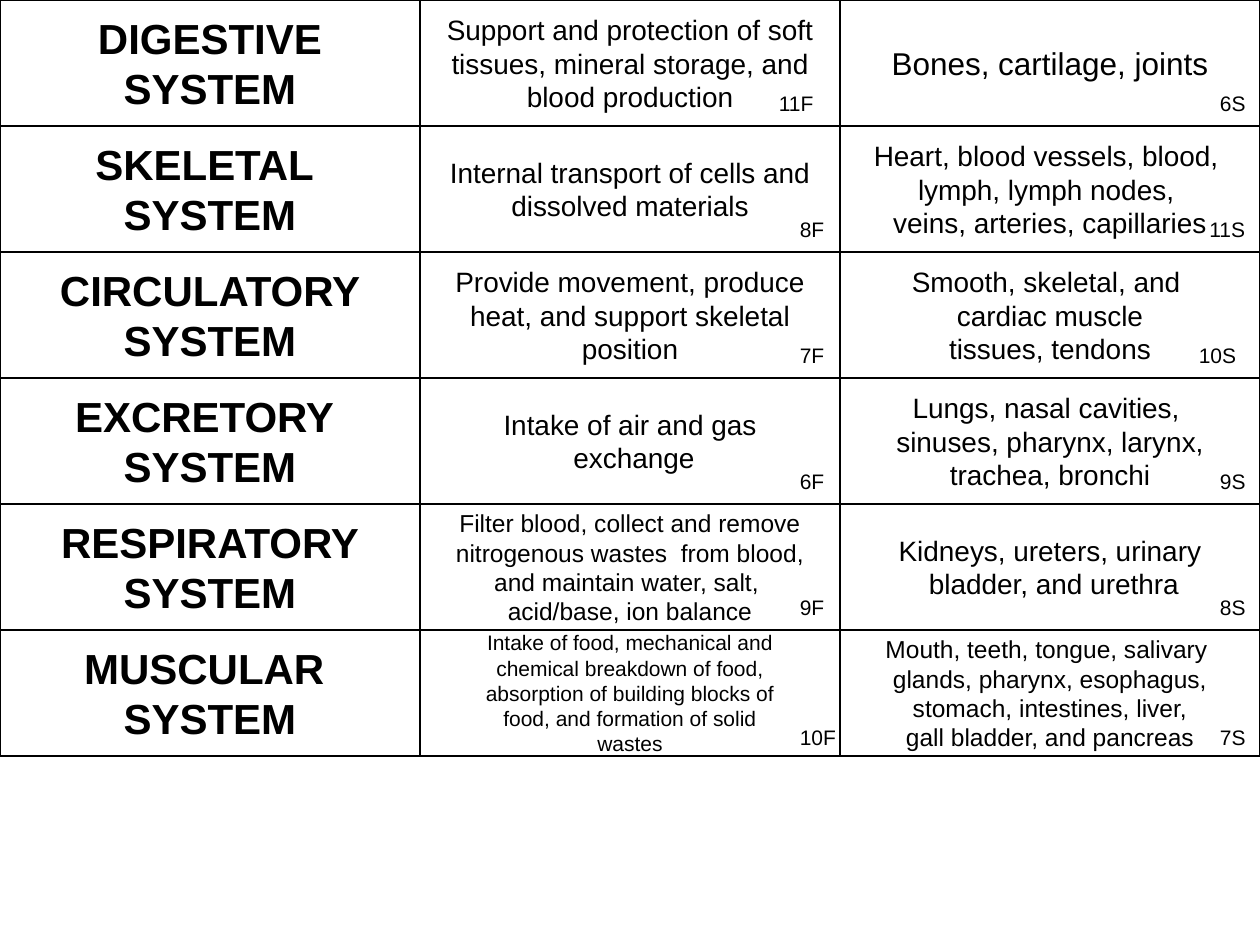
from lxml import etree
from pptx import Presentation
from pptx import util as u
from pptx.dml import color
from pptx.enum import shapes, text
from pptx.oxml import ns

INK = "000000"

deck = Presentation()
deck.slide_width, deck.slide_height = u.Inches(10), u.Inches(7.5)
page = deck.slides.add_slide(deck.slide_layouts[6])

# Grid: three equal columns, rows of 2/15 of the slide height
COLUMN = deck.slide_width / 3
ROW = deck.slide_height * 2 / 15
STEP = COLUMN / 40  # fine step for placing the card codes


def rgb(value):
    return color.RGBColor.from_string(value)


def write(frame, lines, size, bold=False, align=text.PP_ALIGN.LEFT):
    for number, line in enumerate(lines):
        para = frame.paragraphs[0] if number == 0 else frame.add_paragraph()
        para.alignment = align
        span = para.add_run()
        span.text = line
        span.font.name = "Arial"
        span.font.size = u.Pt(size)
        span.font.bold = bold
        span.font.color.rgb = rgb(INK)


# Each row: system name, then (size, lines) for its function and its structures
rows = [
    ("DIGESTIVE",
     (16, ["Support and protection of soft", "tissues, mineral storage, and",
           "blood production"]),
     (18, ["Bones, cartilage, joints"])),
    ("SKELETAL ",
     (16, ["Internal transport of cells and", "dissolved materials"]),
     (16, ["Heart, blood vessels, blood, ", "lymph, lymph nodes, ",
           "veins, arteries, capillaries"])),
    ("CIRCULATORY",
     (16, ["Provide movement, produce", "heat, and support skeletal", "position"]),
     (16, ["Smooth, skeletal, and ", "cardiac muscle", "tissues, tendons"])),
    ("EXCRETORY ",
     (16, ["Intake of air and gas", " exchange"]),
     (16, ["Lungs, nasal cavities, ", "sinuses, pharynx, larynx,",
           "trachea, bronchi"])),
    ("RESPIRATORY",
     (14, ["Filter blood, collect and remove", " nitrogenous wastes  from blood, ",
           "and maintain water, salt, ", "acid/base, ion balance"]),
     (16, ["Kidneys, ureters, urinary", " bladder, and urethra"])),
    ("MUSCULAR ",
     (12, ["Intake of food, mechanical and", "chemical breakdown of food,",
           "absorption of building blocks of", "food, and formation of solid",
           "wastes"]),
     (14, ["Mouth, teeth, tongue, salivary ", "glands, pharynx, esophagus,",
           " stomach, intestines, liver, ", "gall bladder, and pancreas"])),
]

# Cards
for row, (system, function, structures) in enumerate(rows):
    cells = [(24, [system, "SYSTEM"]), function, structures]
    for column, (size, lines) in enumerate(cells):
        box = page.shapes.add_shape(
            shapes.MSO_SHAPE.RECTANGLE, u.Emu(round(column * COLUMN)),
            u.Emu(round(row * ROW)), u.Emu(round(COLUMN)), u.Emu(round(ROW)))
        box.shadow.inherit = False
        box.fill.background()
        box.line.color.rgb = rgb(INK)
        box.line.width = u.Pt(0.75)
        box.text_frame.word_wrap = False
        box.text_frame.vertical_anchor = text.MSO_ANCHOR.MIDDLE
        write(box.text_frame, lines, size, column == 0, text.PP_ALIGN.CENTER)

# Card codes: (code, left, width) in fine steps, one per row
codes = [
    [("11F", 73, 7), ("8F", 75, 5), ("7F", 75, 5),
     ("6F", 75, 5), ("9F", 75, 7), ("10F", 75, 7)],
    [("6S", 115, 5), ("11S", 114, 6), ("10S", 113, 7),
     ("9S", 115, 5), ("8S", 115, 7), ("7S", 115, 7)],
]
for group in codes:
    for row, (code, left, width) in enumerate(group):
        drop = 0.7 if row == len(rows) - 1 else 0.67
        box = page.shapes.add_textbox(
            u.Emu(round(left * STEP)), u.Emu(round((row + drop) * ROW)),
            u.Emu(round(width * STEP)), u.Emu(round(0.3 * ROW)))
        box.text_frame.word_wrap = True
        box.text_frame.auto_size = text.MSO_AUTO_SIZE.SHAPE_TO_FIT_TEXT
        write(box.text_frame, [code], 12)
        # Half a line of space before the code
        properties = box.text_frame.paragraphs[0]._p.get_or_add_pPr()
        before = etree.SubElement(properties, ns.qn("a:spcBef"))
        etree.SubElement(before, ns.qn("a:spcPct"), val="50000")

deck.save("out.pptx")
